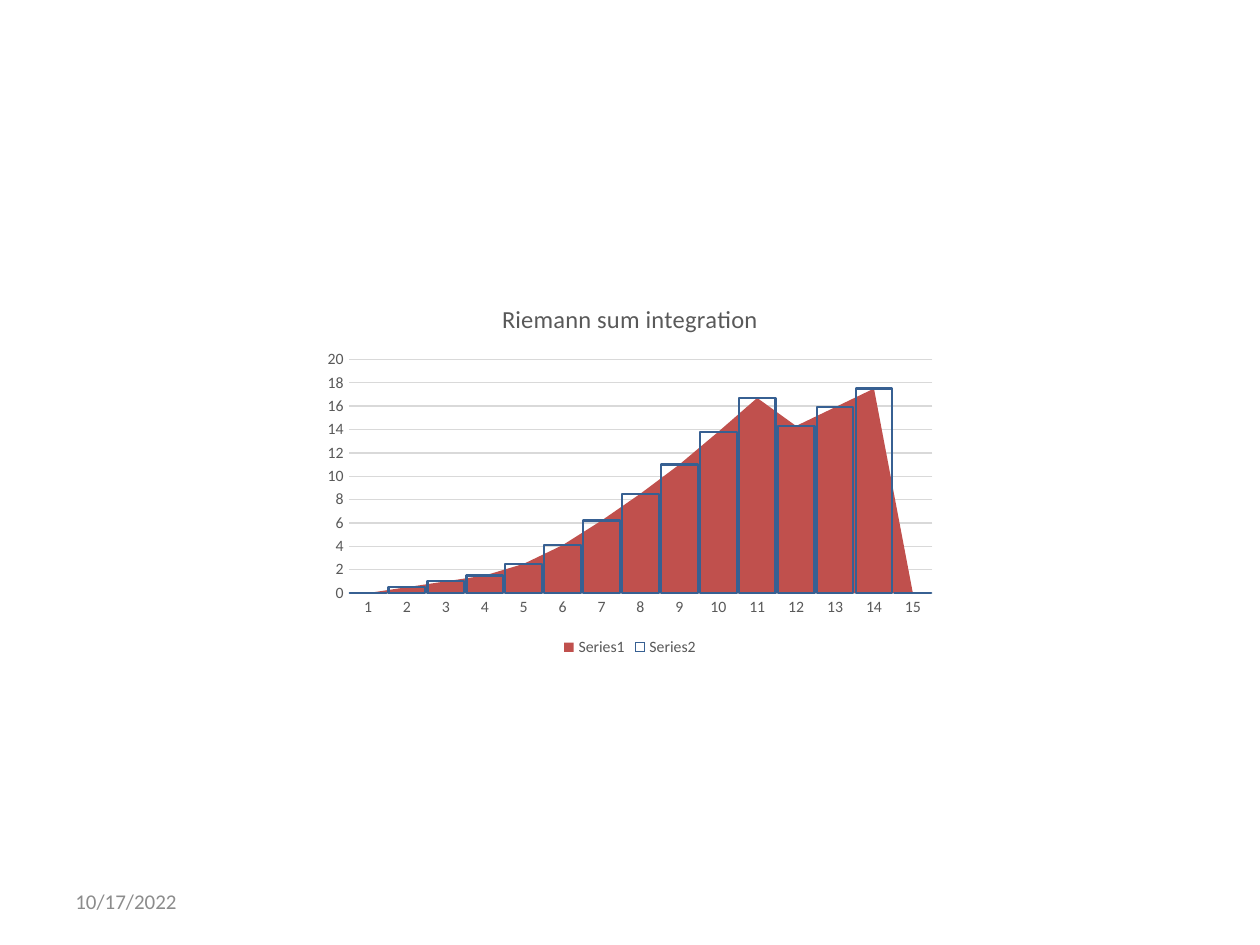
from dataclasses import dataclass

from pptx import Presentation
from pptx import util as u
from pptx.chart.data import CategoryChartData
from pptx.dml.color import RGBColor
from pptx.enum import chart as ch
from pptx.enum import text
from pptx.oxml import parse_xml
from pptx.oxml.ns import nsdecls, qn


@dataclass(frozen=True)
class Theme:
    font: str = "Calibri"
    label: RGBColor = RGBColor(0x59, 0x59, 0x59)
    date: RGBColor = RGBColor(0x8C, 0x8C, 0x8C)
    grid: RGBColor = RGBColor(0xD9, 0xD9, 0xD9)
    area: RGBColor = RGBColor(0xC0, 0x50, 0x4D)
    bar_outline: RGBColor = RGBColor(0x37, 0x60, 0x92)
    title_size: int = 14
    date_size: int = 12
    label_size: int = 9
    grid_width: float = 0.75
    bar_width: float = 1.25


THEME = Theme()
HEIGHTS = (0, 0.5, 1, 1.5, 2.5, 4.1, 6.2, 8.5, 11, 13.8, 16.7, 14.3, 15.9, 17.5)


def style_font(font, size: float, color: RGBColor) -> None:
    font.name = THEME.font
    font.size = u.Pt(size)
    font.bold = False
    font.color.rgb = color


def style_line(line, color: RGBColor, width: float) -> None:
    line.color.rgb = color
    line.width = u.Pt(width)


def move_to_columns(chart, series) -> None:
    """Move a series from the area plot to a stacked column plot on the same axes."""
    area_plot = chart.plots[0]._element
    column_plot = parse_xml(
        f'<c:barChart {nsdecls("c")}><c:barDir val="col"/>'
        '<c:grouping val="stacked"/><c:varyColors val="0"/>'
        '<c:gapWidth val="6"/><c:overlap val="100"/></c:barChart>'
    )
    column_plot.find(qn("c:varyColors")).addnext(series._element)
    for axis_id in area_plot.findall(qn("c:axId")):
        column_plot.append(parse_xml(
            f'<c:axId {nsdecls("c")} val="{axis_id.get("val")}"/>'
        ))
    area_plot.addnext(column_plot)
    for flag in area_plot.findall(".//" + qn("c:invertIfNegative")):
        flag.getparent().remove(flag)
    crossing = chart.value_axis._element.find(qn("c:crossBetween"))
    if crossing is not None:
        crossing.set("val", "between")


def style_axes(chart) -> None:
    for axis in (chart.category_axis, chart.value_axis):
        axis.major_tick_mark = axis.minor_tick_mark = ch.XL_TICK_MARK.NONE
        style_font(axis.tick_labels.font, THEME.label_size, THEME.label)
    chart.category_axis.has_major_gridlines = False
    style_line(chart.category_axis.format.line, THEME.grid, THEME.grid_width)

    values = chart.value_axis
    values.minimum_scale, values.maximum_scale, values.major_unit = 0, 20, 2
    values.tick_labels.number_format = "General"
    values.tick_labels.number_format_is_linked = False
    values.format.line.fill.background()
    values.has_major_gridlines = True
    style_line(values.major_gridlines.format.line, THEME.grid, THEME.grid_width)


def add_riemann_chart(page) -> None:
    data = CategoryChartData()
    data.categories = [str(number) for number in range(1, len(HEIGHTS) + 2)]
    data.add_series("Series1", (*HEIGHTS, 0))
    data.add_series("Series2", (*HEIGHTS, None))
    chart = page.shapes.add_chart(
        ch.XL_CHART_TYPE.AREA_STACKED, u.Inches(2.5), u.Inches(2.25),
        u.Inches(5), u.Inches(3), data,
    ).chart
    style_font(chart.font, THEME.label_size, THEME.label)

    chart.has_title = True
    chart.chart_title.include_in_layout = False
    title = chart.chart_title.text_frame
    title.text = "Riemann sum integration"
    style_font(title.paragraphs[0].runs[0].font, THEME.title_size, THEME.label)

    chart.has_legend = True
    chart.legend.position = ch.XL_LEGEND_POSITION.BOTTOM
    chart.legend.include_in_layout = False
    style_font(chart.legend.font, THEME.label_size, THEME.label)

    style_axes(chart)
    chart.plots[0].vary_by_categories = False
    curve, rectangles = chart.plots[0].series
    curve.format.fill.solid()
    curve.format.fill.fore_color.rgb = THEME.area
    curve.format.line.fill.background()
    rectangles.format.fill.background()
    style_line(rectangles.format.line, THEME.bar_outline, THEME.bar_width)
    move_to_columns(chart, rectangles)


def add_date(page) -> None:
    box = page.shapes.add_textbox(
        u.Inches(0.5), u.Inches(6.95), u.Inches(2.33), u.Inches(0.4)
    )
    frame = box.text_frame
    frame.word_wrap = True
    frame.vertical_anchor = text.MSO_ANCHOR.MIDDLE
    frame.text = "10/17/2022"
    style_font(frame.paragraphs[0].runs[0].font, THEME.date_size, THEME.date)


def main() -> None:
    deck = Presentation()
    deck.slide_width, deck.slide_height = u.Inches(10), u.Inches(7.5)
    page = deck.slides.add_slide(deck.slide_layouts[6])
    add_date(page)
    add_riemann_chart(page)
    deck.save("out.pptx")


if __name__ == "__main__":
    main()
